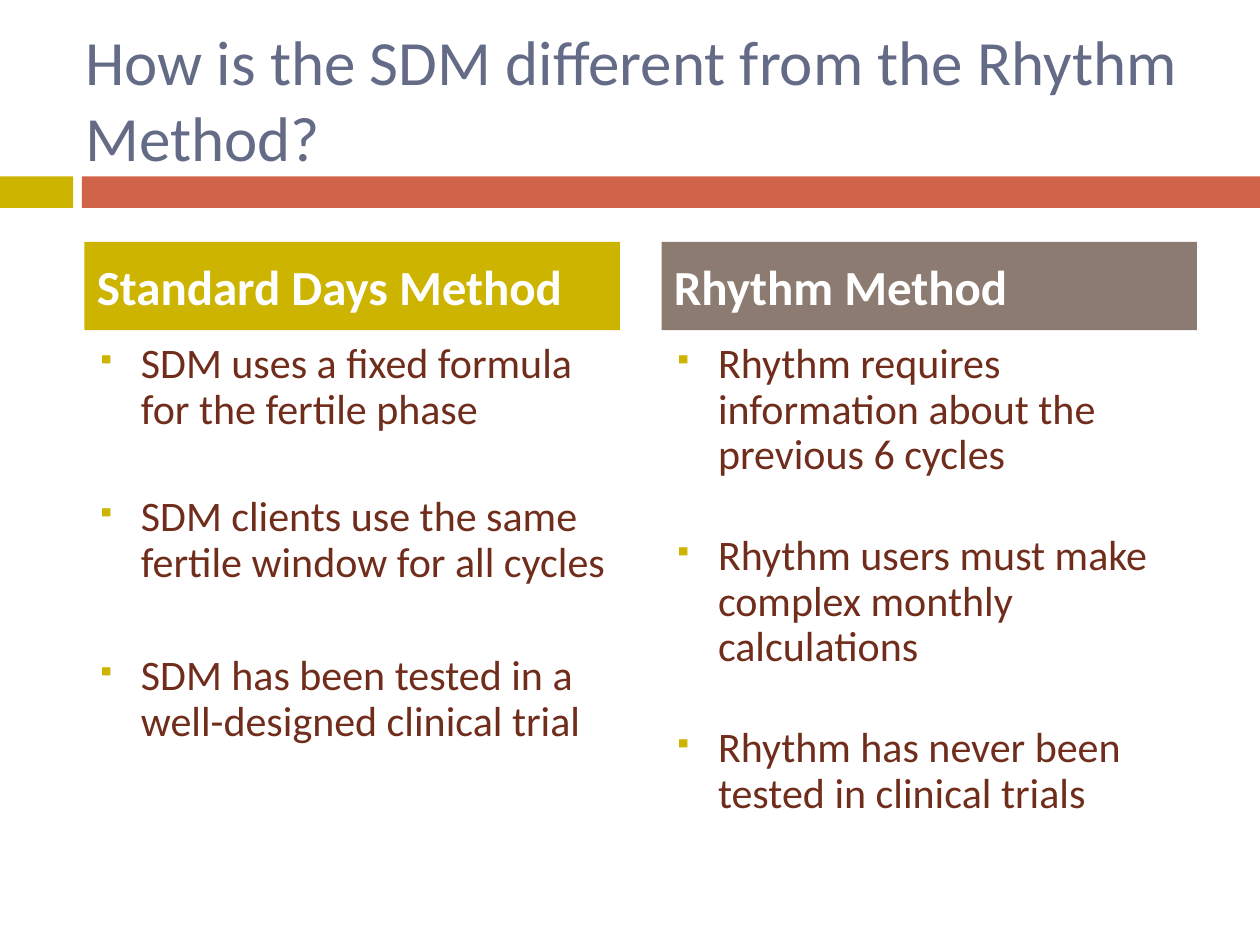
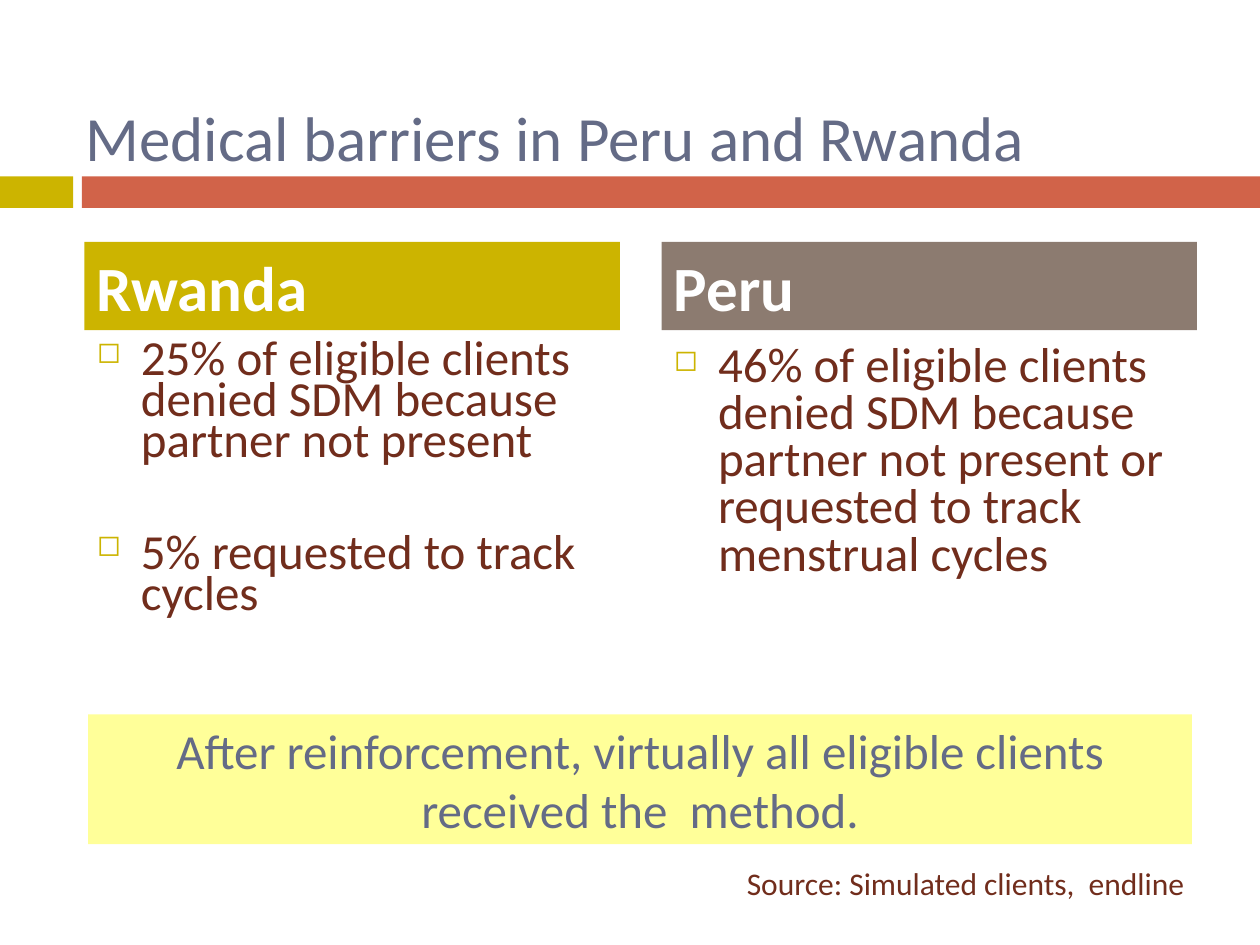
from lxml import etree
from pptx import Presentation
from pptx.dml.color import RGBColor
from pptx.enum.shapes import MSO_SHAPE
from pptx.enum.text import MSO_ANCHOR, PP_ALIGN
from pptx.oxml.ns import qn
from pptx.util import Inches, Pt

RECT = MSO_SHAPE.RECTANGLE
TOP, MIDDLE, BOTTOM = MSO_ANCHOR.TOP, MSO_ANCHOR.MIDDLE, MSO_ANCHOR.BOTTOM
LEFT, CENTER, RIGHT = PP_ALIGN.LEFT, PP_ALIGN.CENTER, PP_ALIGN.RIGHT

FONT = "Calibri"
GOLD, RUST, TAUPE = "CCB400", "D16349", "8C7B70"
SLATE, BROWN, WHITE, CREAM = "646B86", "712D1C", "FFFFFF", "FFFF99"
COLS = (0.67, 5.25)
COL_W = 4.25
HEAD_Y, HEAD_H = 1.92, 0.7


def color(code):
    """Turn a hex string into a colour."""
    return RGBColor.from_string(code)


def bar(slide, box, fill):
    """Draw a plain filled rectangle."""
    shape = slide.shapes.add_shape(RECT, *map(Inches, box))
    shape.shadow.inherit = False
    shape.fill.solid()
    shape.fill.fore_color.rgb = color(fill)
    shape.line.fill.background()
    return shape


def bullet(para, mark):
    """Give a paragraph a hanging gold bullet."""
    props = para._p.get_or_add_pPr()
    props.set("marL", str(Inches(0.35)))
    props.set("indent", str(Inches(-0.35)))
    tint = etree.SubElement(props, qn("a:buClr"))
    etree.SubElement(tint, qn("a:srgbClr"), val=GOLD)
    etree.SubElement(props, qn("a:buSzPct"), val="60000")
    etree.SubElement(props, qn("a:buChar"), char=mark)


def write(slide, box, lines, size, ink, fill=None, bold=False, align=LEFT,
          anchor=TOP, before=0, gaps=(), pitch=None, mark=None, foot=0.05):
    """Write paragraphs in a box, with a fill if one is given."""
    if fill:
        shape = bar(slide, box, fill)
    else:
        shape = slide.shapes.add_textbox(*map(Inches, box))
    frame = shape.text_frame
    frame.word_wrap = True
    frame.vertical_anchor = anchor
    frame.margin_bottom = Inches(foot)
    frame.text = "\n".join(lines)
    for para, gap in zip(frame.paragraphs, (before, *gaps)):
        para.alignment = align
        para.space_before = Pt(gap)
        if pitch:
            para.line_spacing = pitch
        if mark:
            bullet(para, mark)
        font = para.runs[0].font
        font.name, font.size, font.bold = FONT, Pt(size), bold
        font.color.rgb = color(ink)


def base(deck, title):
    """Add a slide with its title and two bands."""
    slide = deck.slides.add_slide(deck.slide_layouts[6])
    bar(slide, (0, 1.4, 0.58, 0.25), GOLD)
    bar(slide, (0.65, 1.4, 9.35, 0.25), RUST)
    write(slide, (0.58, 0.15, 8.92, 1.23), [title], 36, SLATE,
          anchor=BOTTOM, foot=0)
    return slide


def heads(slide, names, size):
    """Place the two column headings."""
    for x, name, fill in zip(COLS, names, (GOLD, TAUPE)):
        write(slide, (x, HEAD_Y, COL_W, HEAD_H), [name], size, WHITE,
              fill=fill, bold=True, anchor=MIDDLE, before=7)


def points(slide, box, lines, size, mark, pitch, gaps=()):
    """Place one column of bullet points."""
    write(slide, box, lines, size, BROWN, before=7, gaps=gaps,
          pitch=pitch, mark=mark)


def methods(deck):
    """Compare the two methods."""
    slide = base(deck, "How is the SDM different from the Rhythm Method?")
    sides = (
        (["SDM uses a fixed formula for the fertile phase",
          "SDM clients use the same fertile window for all cycles",
          "SDM has been tested in a well-designed clinical trial"], (35.5, 39)),
        (["Rhythm requires information about the previous 6 cycles",
          "Rhythm users must make complex monthly calculations",
          "Rhythm has never been tested in clinical trials"], (32, 32)),
    )
    for x, (lines, gaps) in zip(COLS, sides):
        points(slide, (x, 2.67, COL_W, 3.92), lines, 24, "▪", 0.9, gaps)
    heads(slide, ("Standard Days Method", "Rhythm Method"), 28)


def barriers(deck):
    """Compare the barriers in two countries."""
    slide = base(deck, "Medical barriers in Peru and Rwanda")
    points(slide, (COLS[0], 2.67, COL_W, 2.75),
           ["25% of eligible clients denied SDM because partner not present",
            "5% requested to track cycles"], 28, "◻", 0.7, (40,))
    points(slide, (COLS[1], 2.69, COL_W, 2.7),
           ["46% of eligible clients denied SDM because partner not present "
            "or requested to track menstrual cycles"], 28, "◻", 0.8)
    heads(slide, ("Rwanda", "Peru"), 36)
    write(slide, (0.7, 5.67, 8.76, 1.03),
          ["After reinforcement, virtually all eligible clients "
           "received the  method."], 28, SLATE, fill=CREAM, align=CENTER)
    write(slide, (5.23, 6.81, 4.27, 0.4),
          ["Source: Simulated clients,  endline"], 18, BROWN, align=RIGHT)


def main():
    """Build and save the deck."""
    deck = Presentation()
    deck.slide_width, deck.slide_height = Inches(10), Inches(7.5)
    methods(deck)
    barriers(deck)
    deck.save("out.pptx")


if __name__ == "__main__":
    main()
